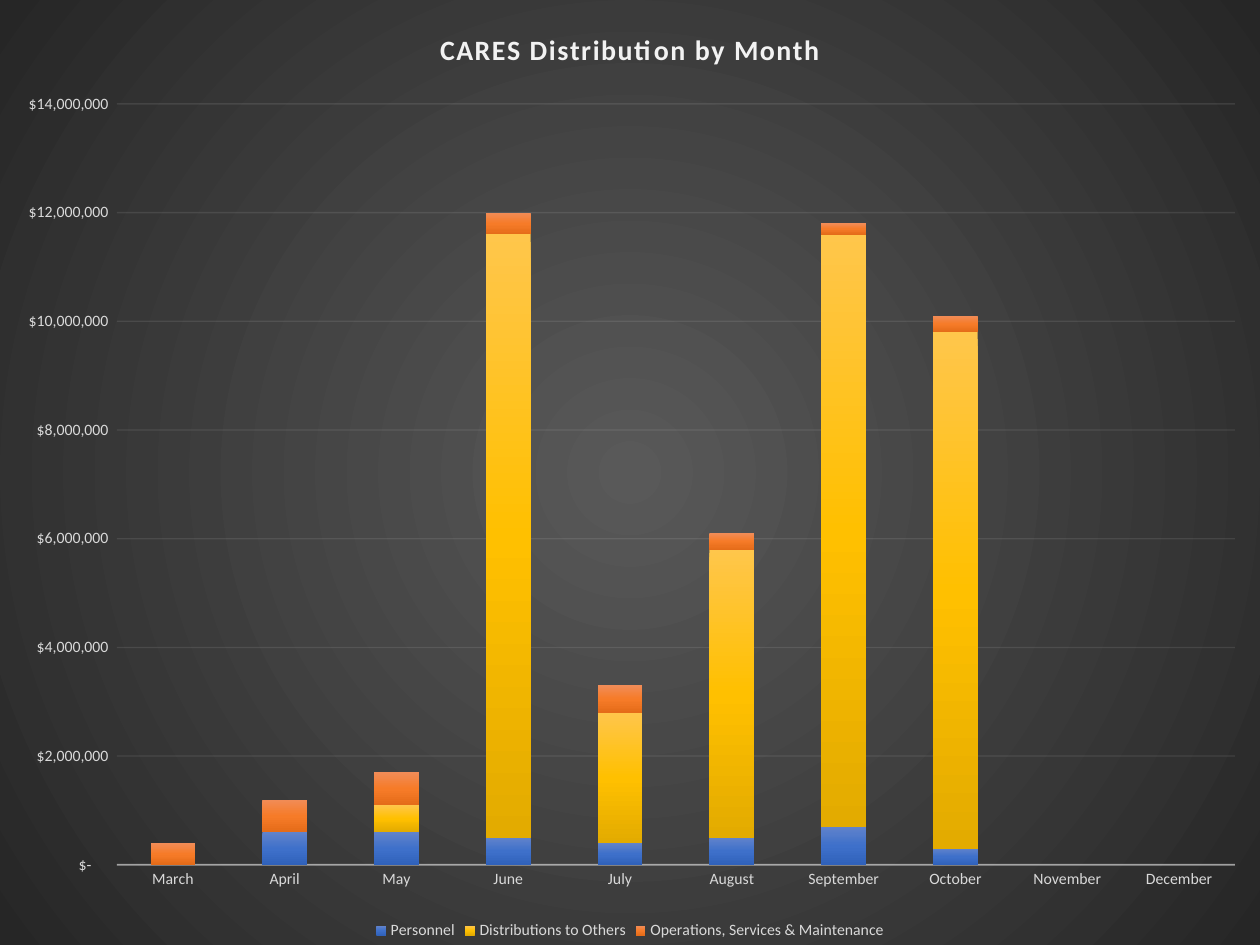
from dataclasses import dataclass

import pptx
import pptx.chart.data
import pptx.dml.color
import pptx.enum.chart
import pptx.oxml
import pptx.oxml.ns
import pptx.util
from lxml import etree

DPI = 126
W, H = 1260, 945
PLOT = (117, 104, 1118, 761)  # left, top, width, height of the plot area in px
FONT = "Calibri"
COLORS = {"title": "F2F2F2", "line": "F2F2F2", "label": "D9D9D9",
          "center": "595959", "edge": "262626"}
MONTHS = ["March", "April", "May", "June", "July", "August",
          "September", "October", "November", "December"]
MONEY = r'_("$"* #,##0_);_("$"* \(#,##0\);_("$"* "-"??_);_(@_)'
MILLION = 1_000_000
LINEAR_DOWN = '<a:lin ang="5400000" scaled="0"/>'
FROM_CENTER = ('<a:path path="circle"><a:fillToRect l="50000" t="50000" '
               'r="50000" b="50000"/></a:path>')
qn = pptx.oxml.ns.qn


@dataclass(frozen=True)
class Spending:
    name: str
    millions: tuple[float, ...]
    gradient: tuple[str, str, str]


SPENDING = [
    Spending("Personnel", (0, 0.6, 0.6, 0.5, 0.4, 0.5, 0.7, 0.3, 0, 0),
             ("6183CB", "3E70CA", "3062BB")),
    Spending("Distributions to Others", (0, 0, 0.5, 11.1, 2.4, 5.3, 10.9, 9.5, 0, 0),
             ("FFC64B", "FFC000", "E3AB00")),
    Spending("Operations, Services & Maintenance",
             (0.4, 0.6, 0.6, 0.4, 0.5, 0.3, 0.2, 0.3, 0, 0),
             ("F18C57", "F67B28", "E56C19")),
]


def px(n: int) -> int:
    return round(n * 914400 / DPI)


def rgb(key: str) -> pptx.dml.color.RGBColor:
    return pptx.dml.color.RGBColor.from_string(COLORS[key])


def gradient(colors: tuple[str, ...], direction: str):
    """Gradient fill with evenly spaced stops."""
    step = 100000 // (len(colors) - 1)
    stops = "".join(f'<a:gs pos="{i * step}"><a:srgbClr val="{c}"/></a:gs>'
                    for i, c in enumerate(colors))
    return pptx.oxml.parse_xml(
        f'<a:gradFill {pptx.oxml.ns.nsdecls("a")} rotWithShape="1">'
        f'<a:gsLst>{stops}</a:gsLst>{direction}</a:gradFill>')


def style_font(font, size: int, color: str, bold: bool = False) -> None:
    font.name, font.size, font.bold = FONT, pptx.util.Pt(size), bold
    font.color.rgb = rgb(color)


def style_line(line, owner, where: str, width: float, opacity: int) -> None:
    """Thin line whose colour, found below owner, is partly transparent."""
    line.color.rgb = rgb("line")
    line.width = pptx.util.Pt(width)
    clr = owner.find(f"{where}//{qn('a:srgbClr')}")
    etree.SubElement(clr, qn("a:alpha")).set("val", str(opacity * 1000))


def style_axis(axis) -> None:
    axis.major_tick_mark = axis.minor_tick_mark = pptx.enum.chart.XL_TICK_MARK.NONE
    style_font(axis.tick_labels.font, 9, "label")


def place_plot(chart) -> None:
    plot_area = chart._chartSpace.chart.plotArea
    old = plot_area.find(qn("c:layout"))
    if old is not None:
        plot_area.remove(old)
    layout = etree.Element(qn("c:layout"))
    manual = etree.SubElement(layout, qn("c:manualLayout"))
    left, top, width, height = PLOT
    for tag, val in (("layoutTarget", "inner"), ("xMode", "edge"), ("yMode", "edge"),
                     ("x", left / W), ("y", top / H), ("w", width / W), ("h", height / H)):
        etree.SubElement(manual, qn(f"c:{tag}")).set("val", str(val))
    plot_area.insert(0, layout)


def add_spending_chart(s) -> None:
    data = pptx.chart.data.CategoryChartData(number_format=MONEY)
    data.categories = MONTHS
    for item in SPENDING:
        data.add_series(item.name, [round(v * MILLION) for v in item.millions])
    chart = s.shapes.add_chart(pptx.enum.chart.XL_CHART_TYPE.COLUMN_STACKED,
                               0, 0, px(W), px(H), data).chart
    style_font(chart.font, 10, "label")

    # Dark background
    sp_pr = etree.Element(qn("c:spPr"))
    sp_pr.append(gradient((COLORS["center"], COLORS["edge"]), FROM_CENTER))
    etree.SubElement(etree.SubElement(sp_pr, qn("a:ln")), qn("a:noFill"))
    chart._chartSpace.chart.addnext(sp_pr)

    # Title
    chart.has_title = True
    chart.chart_title.include_in_layout = False
    r = chart.chart_title.text_frame.paragraphs[0].add_run()
    r.text = "CARES Distribution by Month"
    style_font(r.font, 16, "title", bold=True)
    r.font._element.set("spc", "100")

    # Legend
    chart.has_legend = True
    chart.legend.position = pptx.enum.chart.XL_LEGEND_POSITION.BOTTOM
    chart.legend.include_in_layout = False
    style_font(chart.legend.font, 9, "label")

    # Axes
    cat, val = chart.category_axis, chart.value_axis
    style_axis(cat)
    style_axis(val)
    style_line(cat.format.line, cat._element, qn("c:spPr"), 1, 54)
    val.format.line.fill.background()
    val.minimum_scale, val.maximum_scale, val.major_unit = 0, 14 * MILLION, 2 * MILLION
    val.tick_labels.number_format = MONEY
    val.tick_labels.number_format_is_linked = False
    style_line(val.major_gridlines.format.line, val._element,
               qn("c:majorGridlines"), 0.75, 10)

    # Columns
    plot = chart.plots[0]
    plot.gap_width, plot.overlap, plot.vary_by_categories = 150, 100, False
    for ser, item in zip(plot.series, SPENDING):
        ser.format.fill.background()
        fill = ser._element.find(qn("c:spPr")).find(qn("a:noFill"))
        fill.getparent().replace(fill, gradient(item.gradient, LINEAR_DOWN))
    place_plot(chart)


def main() -> None:
    prs = pptx.Presentation()
    prs.slide_width, prs.slide_height = px(W), px(H)
    s = prs.slides.add_slide(prs.slide_layouts[6])
    add_spending_chart(s)
    prs.save("out.pptx")


if __name__ == "__main__":
    main()
